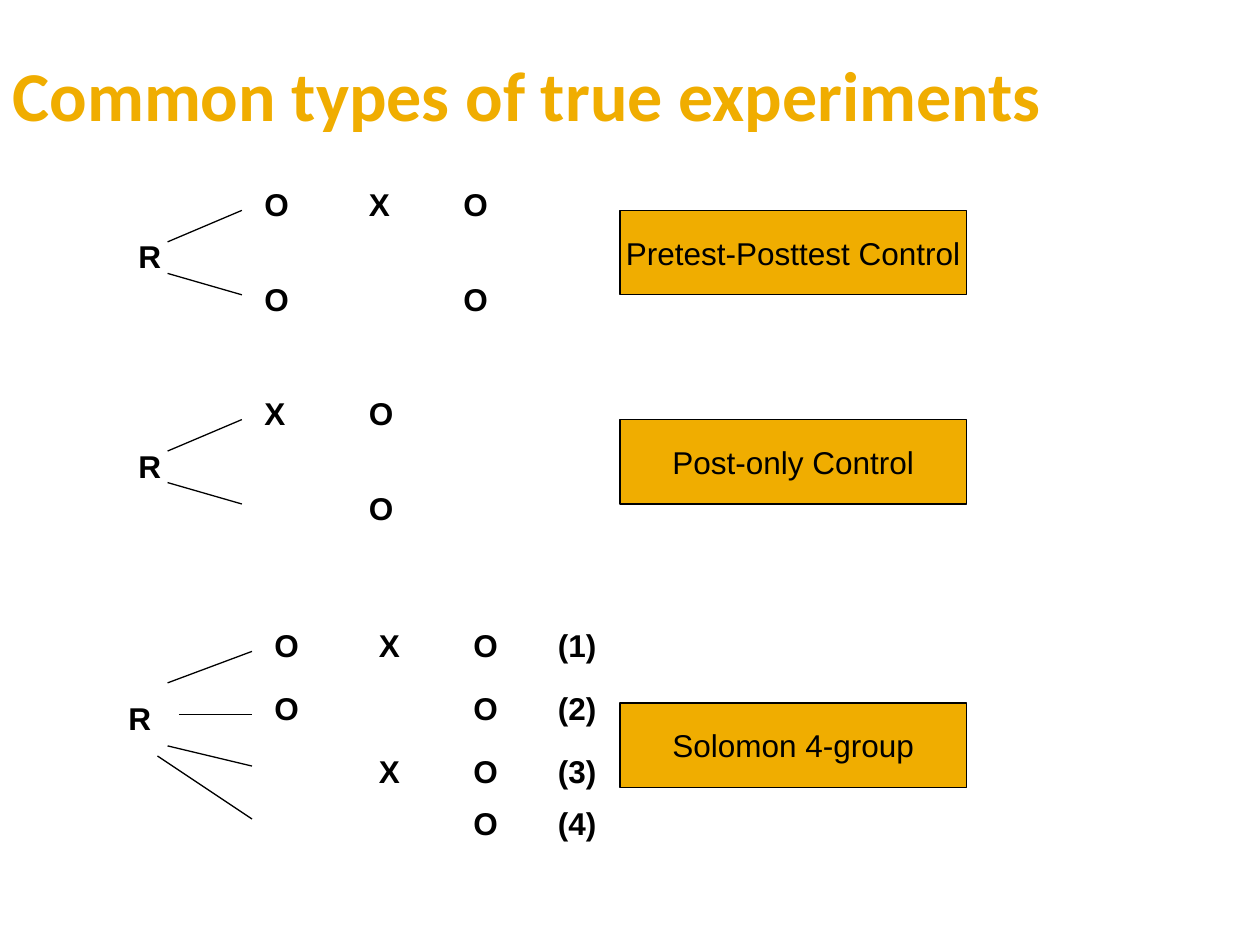
"""Builds a slide comparing three common true experimental designs."""
from pptx import Presentation
from pptx.dml.color import RGBColor
from pptx.enum.shapes import MSO_CONNECTOR, MSO_SHAPE
from pptx.enum.text import MSO_ANCHOR, MSO_AUTO_SIZE, PP_ALIGN
from pptx.oxml.ns import qn
from pptx.util import Inches, Pt
from lxml import etree

THEME = {
    "gold": RGBColor(0xF0, 0xAD, 0x00),
    "black": RGBColor(0, 0, 0),
    "title_font": "Calibri",
    "body_font": "Arial",
    "title_size": Pt(40),
    "body_size": Pt(18),
    "line_width": Pt(0.75),
}
TITLE = "Common types of true experiments"
SYMBOL_SIZE = (0.67, 0.4)
LABEL_LEFT, LABEL_SIZE = 4.92, (2.75, 0.67)
COLUMN_OFFSETS = (0, 0.83, 1.58, 2.25)
PAIR_BRANCHES = [((1.33, 0.5), (1.92, 0.25)), ((1.33, 0.75), (1.92, 0.92))]

DESIGNS = [
    {"label": "Pretest-Posttest Control", "label_top": 0.25, "top": 1.42,
     "left": 2, "assignment": (1, 0.41), "grouped": False,
     "rows": [(0, ("O", "X", "O")), (0.75, ("O", "", "O"))],
     "branches": PAIR_BRANCHES},
    {"label": "Post-only Control", "label_top": 0.25, "top": 3.08,
     "left": 2, "assignment": (1, 0.42), "grouped": False,
     "rows": [(0, ("X", "O")), (0.75, ("", "O"))],
     "branches": PAIR_BRANCHES},
    {"label": "Solomon 4-group", "label_top": 0.66, "top": 4.92,
     "left": 2.08, "assignment": (0.92, 0.58), "grouped": True,
     "rows": [(0, ("O", "X", "O", "(1)")), (0.5, ("O", "", "O", "(2)")),
              (1, ("", "X", "O", "(3)")), (1.41, ("", "", "O", "(4)"))],
     "branches": [((1.33, 0.5), (2, 0.25)), ((1.42, 0.75), (2, 0.75)),
                  ((1.33, 1), (2, 1.16)), ((1.25, 1.08), (2, 1.58))]},
]


def write(frame, text, *, font=THEME["body_font"], size=THEME["body_size"],
          color=THEME["black"], bold=False, align=PP_ALIGN.LEFT,
          anchor=MSO_ANCHOR.TOP, wrap=True, fit=MSO_AUTO_SIZE.NONE):
    frame.word_wrap = wrap
    frame.auto_size = fit
    frame.vertical_anchor = anchor
    paragraph = frame.paragraphs[0]
    paragraph.alignment = align
    run = paragraph.add_run()
    run.text = text
    run.font.name, run.font.size = font, size
    run.font.bold, run.font.color.rgb = bold, color


def add_title(title):
    title.left, title.top = Inches(0), Inches(0.33)
    title.width, title.height = Inches(9), Inches(0.83)
    frame = title.text_frame
    frame.margin_left = Inches(0.1)
    frame.margin_right = frame.margin_top = frame.margin_bottom = Inches(0.05)
    write(frame, TITLE, font=THEME["title_font"], size=THEME["title_size"],
          color=THEME["gold"], bold=True, anchor=MSO_ANCHOR.MIDDLE)


def add_symbol(shapes, text, left, top):
    symbol = shapes.add_textbox(*map(Inches, (left, top, *SYMBOL_SIZE)))
    write(symbol.text_frame, text, bold=True, fit=MSO_AUTO_SIZE.SHAPE_TO_FIT_TEXT)


def outline(line):
    line.color.rgb = THEME["black"]
    line.width = THEME["line_width"]


def add_branch(shapes, start, end, top):
    (x1, y1), (x2, y2) = start, end
    ends = map(Inches, (x1, top + y1, x2, top + y2))
    branch = shapes.add_connector(MSO_CONNECTOR.STRAIGHT, *ends)
    outline(branch.line)
    etree.SubElement(branch._element.spPr, qn("a:effectLst"))


def add_label(shapes, text, top):
    label = shapes.add_shape(MSO_SHAPE.RECTANGLE,
                             *map(Inches, (LABEL_LEFT, top, *LABEL_SIZE)))
    label.shadow.inherit = False
    label.fill.solid()
    label.fill.fore_color.rgb = THEME["gold"]
    outline(label.line)
    write(label.text_frame, text, align=PP_ALIGN.CENTER,
          anchor=MSO_ANCHOR.MIDDLE, wrap=False)


def add_design(slide, design):
    shapes = slide.shapes.add_group_shape().shapes if design["grouped"] else slide.shapes
    top = design["top"]
    assignment_left, assignment_top = design["assignment"]
    add_symbol(shapes, "R", assignment_left, top + assignment_top)
    for row_top, symbols in design["rows"]:
        for offset, symbol in zip(COLUMN_OFFSETS, symbols):
            if symbol:
                add_symbol(shapes, symbol, design["left"] + offset, top + row_top)
    for start, end in design["branches"]:
        add_branch(shapes, start, end, top)
    add_label(shapes, design["label"], top + design["label_top"])


def main():
    deck = Presentation()
    deck.slide_width, deck.slide_height = Inches(10), Inches(7.5)
    slide = deck.slides.add_slide(deck.slide_layouts[5])
    add_title(slide.shapes.title)
    for design in DESIGNS:
        add_design(slide, design)
    deck.save("out.pptx")


if __name__ == "__main__":
    main()
